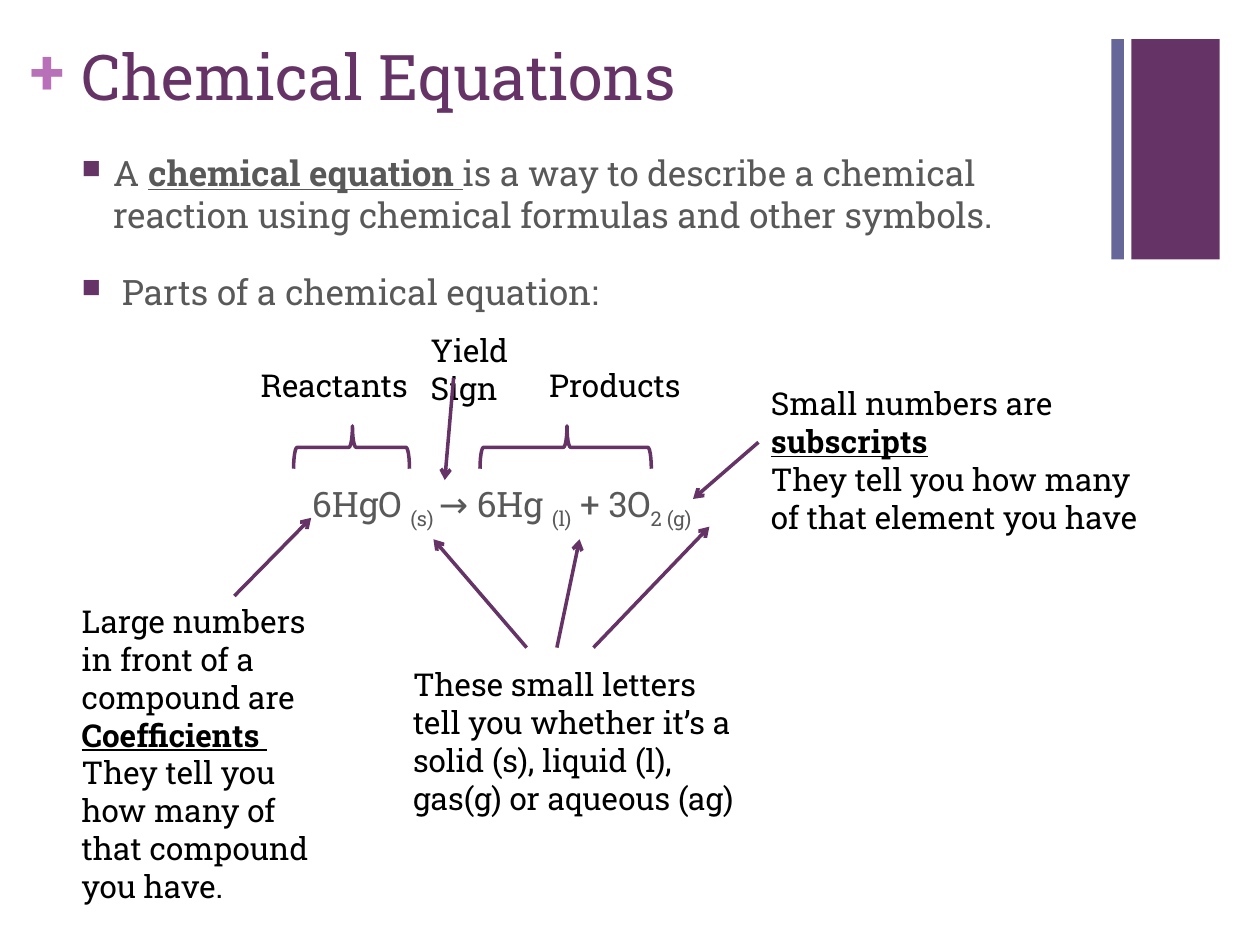
from pptx import Presentation
from pptx import util as u
from pptx.dml.color import RGBColor
from pptx.enum import shapes, text
from pptx.oxml.ns import qn
from lxml import etree

FONT = "Roboto Slab"
PURPLE, BLUE, PINK, GREY, BLACK = "663366", "666699", "B870B8", "595959", "000000"
KEY = {"bold": True, "underline": True}


def rgb(value):
    """Turn a hex string into a colour."""
    return RGBColor.from_string(value)


def box(*lengths):
    """Turn numbers into lengths in inches."""
    return [u.Inches(n) for n in lengths]


def add_xml(parent, tag, **attrs):
    """Append an element with attributes and return it."""
    return etree.SubElement(parent, qn(tag), attrs)


def write(tf, paragraphs, size, color, inset=None):
    """Fill a text frame with paragraphs of (words, format) runs."""
    frame = {"word_wrap": True, "auto_size": text.MSO_AUTO_SIZE.NONE,
             "vertical_anchor": text.MSO_ANCHOR.TOP}
    if inset is not None:
        for side in ("left", "top", "right", "bottom"):
            frame["margin_" + side] = inset
    for name, value in frame.items():
        setattr(tf, name, value)
    for i, runs in enumerate(paragraphs):
        p = tf.paragraphs[0] if i == 0 else tf.add_paragraph()
        p.alignment = text.PP_ALIGN.LEFT
        for words, extra in runs:
            r = p.add_run()
            r.text = words
            fmt = {"name": FONT, "size": u.Pt(size), **extra}
            baseline = fmt.pop("baseline", None)
            for name, value in fmt.items():
                setattr(r.font, name, value)
            r.font.color.rgb = rgb(color)
            if baseline:
                r.font._element.set("baseline", baseline)


def add_text(s, at, paragraphs, size=18, color=BLACK, inset=None):
    """Add a text box and return its text frame."""
    tf = s.shapes.add_textbox(*box(*at)).text_frame
    write(tf, paragraphs, size, color, inset)
    return tf


def add_bar(s, at, color):
    """Add a plain filled bar."""
    sp = s.shapes.add_shape(shapes.MSO_SHAPE.RECTANGLE, *box(*at))
    sp.shadow.inherit = False
    sp.fill.solid()
    sp.fill.fore_color.rgb = rgb(color)
    sp.line.fill.background()


def add_brace(s, left, top, width, height):
    """Add a brace lying on its side with its point upwards."""
    x, y = left + (width - height) / 2, top + (height - width) / 2
    sp = s.shapes.add_shape(shapes.MSO_SHAPE.RIGHT_BRACE, *box(x, y, height, width))
    sp.rotation = 270
    sp.adjustments[0], sp.adjustments[1] = 0.083, 0.508
    sp.shadow.inherit = False
    sp.fill.background()
    sp.line.color.rgb = rgb(PURPLE)
    sp.line.width = u.Pt(2)


def add_arrow(s, start, end):
    """Add a straight arrow pointing at end."""
    c = s.shapes.add_connector(shapes.MSO_CONNECTOR.STRAIGHT, *box(*start, *end))
    c.line.color.rgb = rgb(PURPLE)
    c.line.width = u.Pt(2)
    add_xml(c.line._get_or_add_ln(), "a:tailEnd", type="arrow")
    add_xml(c._element.spPr, "a:effectLst")


def add_header(s, left, top, width, height):
    """Place the title, the plus sign and the corner bars."""
    title = s.shapes.title
    title.left, title.top, title.width, title.height = box(left, top, width, height)
    write(title.text_frame, [[("Chemical Equations", {})]], 36, PURPLE)
    add_text(s, (left - 0.31, top, 0.29, 0.61), [[("+", {"bold": True})]], 36, PINK, 0)
    add_bar(s, (left + 8.27, top + 0.06, 0.1, 1.75), BLUE)
    add_bar(s, (left + 8.43, top + 0.06, 0.7, 1.75), PURPLE)


def add_bullets(s, *at):
    """Place the bulleted statements."""
    tf = add_text(s, at, [
        [("A ", {}), ("chemical equation ", KEY),
         ("is a way to describe a chemical reaction using chemical formulas "
          "and other symbols.", {})],
        [(" Parts of a chemical equation:", {})],
    ], 20, GREY)
    for i, p in enumerate(tf.paragraphs):
        p.space_before = u.Pt(20 if i else 0)
        pPr = p._p.get_or_add_pPr()
        pPr.set("marL", str(u.Inches(0.25)))
        pPr.set("indent", str(u.Inches(-0.25)))
        add_xml(add_xml(pPr, "a:buClr"), "a:srgbClr", val=PURPLE)
        add_xml(pPr, "a:buSzPct", val="75000")
        add_xml(pPr, "a:buChar", char="■")


def add_equation(s, left, top):
    """Place the equation with the labels and braces above it."""
    sub = {"baseline": "-25000"}
    add_text(s, (left, top, 3.6, 0.45), [[
        ("6HgO ", {}), ("(s) ", sub), ("→ 6Hg ", {}), ("(l)", sub),
        (" + 3O", {}), ("2 (g)", sub)]], 20, GREY)
    for label, dx, brace_dx, brace_width in (("Reactants", -0.41, -0.05, 0.92),
                                             ("Products", 1.88, 1.43, 1.36)):
        add_text(s, (left + dx, top - 0.92, 1.4, 0.4), [[(label, {})]])
        add_brace(s, left + brace_dx, top - 0.4, brace_width, 0.34)
    add_text(s, (left + 0.94, top - 1.2, 0.9, 0.7), [[("Yield Sign", {})]])
    add_arrow(s, (left + 1.22, top - 0.78), (left + 1.15, top + 0.03))


def add_coefficients(s, left, top):
    """Place the note on coefficients and its arrow."""
    add_text(s, (left, top, 2.05, 2.52), [
        [("Large numbers in front of a compound are ", {}), ("Coefficients ", KEY)],
        [("They tell you how many of that compound you have.", {})]])
    add_arrow(s, (left + 1.31, top), (left + 1.92, top - 0.62))


def add_states(s, left, top):
    """Place the note on state letters and its three arrows."""
    add_text(s, (left, top, 2.84, 1.31), [[
        ("These small letters tell you whether it’s a solid (s), liquid (l), "
         "gas(g) or aqueous (ag)", {})]])
    for start_x, end_x, rise in ((1, 0.26, 0.95), (1.24, 1.42, 0.95), (1.53, 2.45, 1.05)):
        add_arrow(s, (left + start_x, top - 0.09), (left + end_x, top - rise))


def add_subscripts(s, left, top):
    """Place the note on subscripts and its arrow."""
    add_text(s, (left, top, 3.12, 1.31), [
        [("Small numbers are ", {}), ("subscripts", KEY)],
        [("They tell you how many of that element you have", {})]])
    add_arrow(s, (left, top + 0.51), (left - 0.52, top + 0.96))


def main():
    """Build and save the slide."""
    prs = Presentation()
    prs.slide_width, prs.slide_height = box(10, 7.5)
    s = prs.slides.add_slide(prs.slide_layouts[5])
    add_header(s, 0.55, 0.25, 8.26, 1.22)
    add_bullets(s, 0.55, 1.15, 8.26, 1.4)
    add_equation(s, 2.38, 3.78)
    add_coefficients(s, 0.55, 4.73)
    add_states(s, 3.18, 5.23)
    add_subscripts(s, 6.02, 3)
    prs.save("out.pptx")


if __name__ == "__main__":
    main()
